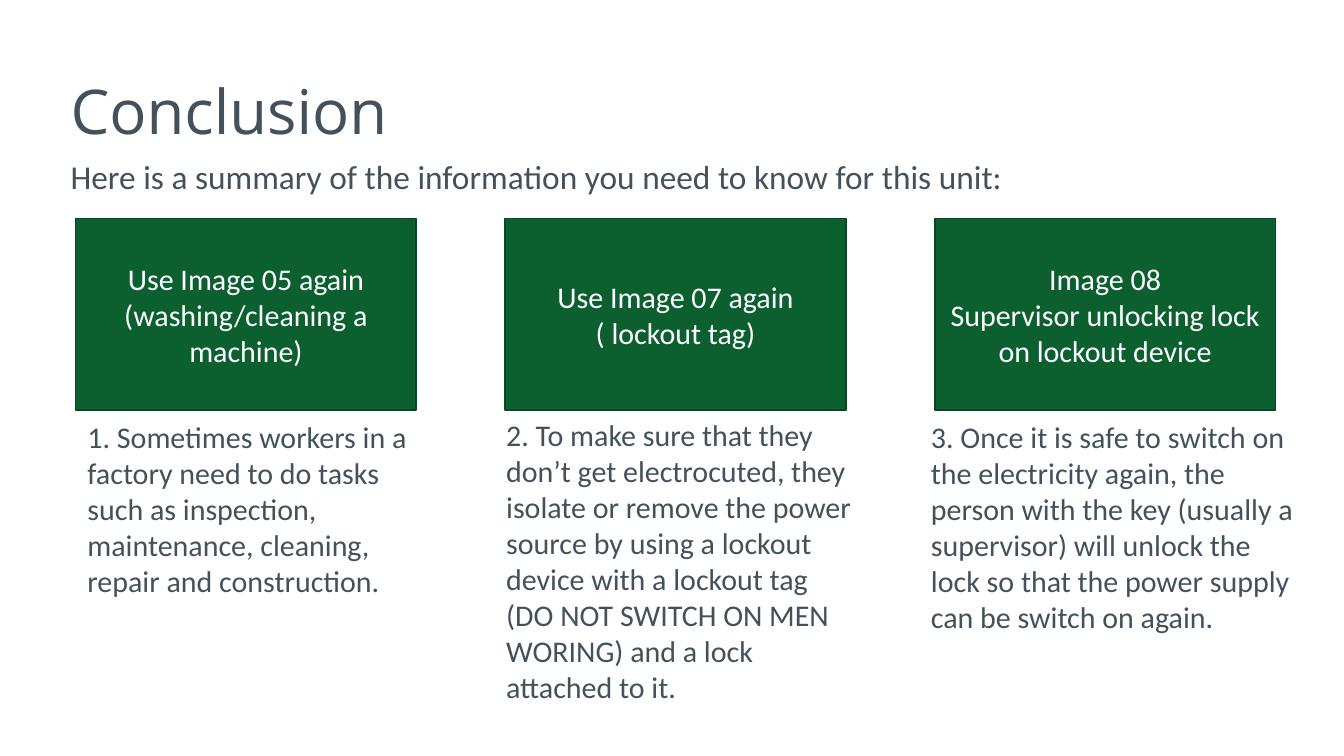
from pptx import Presentation
from pptx.dml.color import RGBColor
from pptx.enum.shapes import MSO_SHAPE
from pptx.enum.text import MSO_ANCHOR, PP_ALIGN
from pptx.util import Inches, Pt

COLORS = {"text": "43525A", "panel": "0C6030", "border": "094724", "light": "FFFFFF"}
PANEL_LEFT, PANEL_TOP = 0.63, 1.82
PANEL_WIDTH, PANEL_HEIGHT = 2.84, 1.6
PANEL_STEP = 3.58
SUMMARIES = [
    (["Use Image 05 again (washing/cleaning a machine)"],
     "1. Sometimes workers in a factory need to do tasks such as inspection, "
     "maintenance, cleaning, repair and construction.",
     (0, 1.62, 2.91, 1.62)),
    (["Use Image 07 again", "( lockout tag)"],
     "2. To make sure that they don’t get electrocuted, they isolate or remove "
     "the power source by using a lockout device with a lockout tag (DO NOT "
     "SWITCH ON MEN WORING) and a lock attached to it.",
     (-0.09, 1.6, 3.14, 2.52)),
    (["Image 08", "Supervisor unlocking lock on lockout device"],
     "3. Once it is safe to switch on the electricity again, the person with the "
     "key (usually a supervisor) will unlock the lock so that the power supply "
     "can be switch on again.",
     (-0.13, 1.62, 3.26, 1.92)),
]


def color(name):
    return RGBColor.from_string(COLORS[name])


def write_text(shape, lines, size=18, font="Calibri", fill="text",
               align=PP_ALIGN.LEFT, anchor=MSO_ANCHOR.TOP,
               line_spacing=None, space_before=None):
    frame = shape.text_frame
    frame.word_wrap = True
    frame.vertical_anchor = anchor
    for index, line in enumerate(lines):
        paragraph = frame.add_paragraph() if index else frame.paragraphs[0]
        paragraph.alignment = align
        if line_spacing:
            paragraph.line_spacing = line_spacing
        if space_before:
            paragraph.space_before = Pt(space_before)
        run = paragraph.add_run()
        run.text = line
        run.font.size = Pt(size)
        run.font.name = font
        run.font.color.rgb = color(fill)


def add_text(slide, box, text, **text_format):
    shape = slide.shapes.add_textbox(*map(Inches, box))
    write_text(shape, [text], **text_format)


def add_heading(slide, left, top, width):
    add_text(slide, (left, top, width, 1.22), "Conclusion", size=37,
             font="Open Sans", anchor=MSO_ANCHOR.MIDDLE, line_spacing=0.9)
    add_text(slide, (left, top + 0.95, width, 0.41),
             "Here is a summary of the information you need to know for this unit:",
             size=20, line_spacing=0.9, space_before=8.4)


def add_summary(slide, left, top, labels, text, text_box):
    panel = slide.shapes.add_shape(
        MSO_SHAPE.RECTANGLE,
        *map(Inches, (left, top, PANEL_WIDTH, PANEL_HEIGHT)))
    panel.shadow.inherit = False
    panel.fill.solid()
    panel.fill.fore_color.rgb = color("panel")
    panel.line.color.rgb = color("border")
    panel.line.width = Pt(1)
    write_text(panel, labels, fill="light", align=PP_ALIGN.CENTER,
               anchor=MSO_ANCHOR.MIDDLE)
    shift, drop, width, height = text_box
    add_text(slide, (left + shift, top + drop, width, height), text)


def main():
    presentation = Presentation()
    presentation.slide_width = Inches(11.2)
    presentation.slide_height = Inches(6.3)
    slide = presentation.slides.add_slide(presentation.slide_layouts[6])
    add_heading(slide, 0.49, 0.34, 9.66)
    for column, summary in enumerate(SUMMARIES):
        add_summary(slide, PANEL_LEFT + column * PANEL_STEP, PANEL_TOP, *summary)
    presentation.save("out.pptx")


if __name__ == "__main__":
    main()
